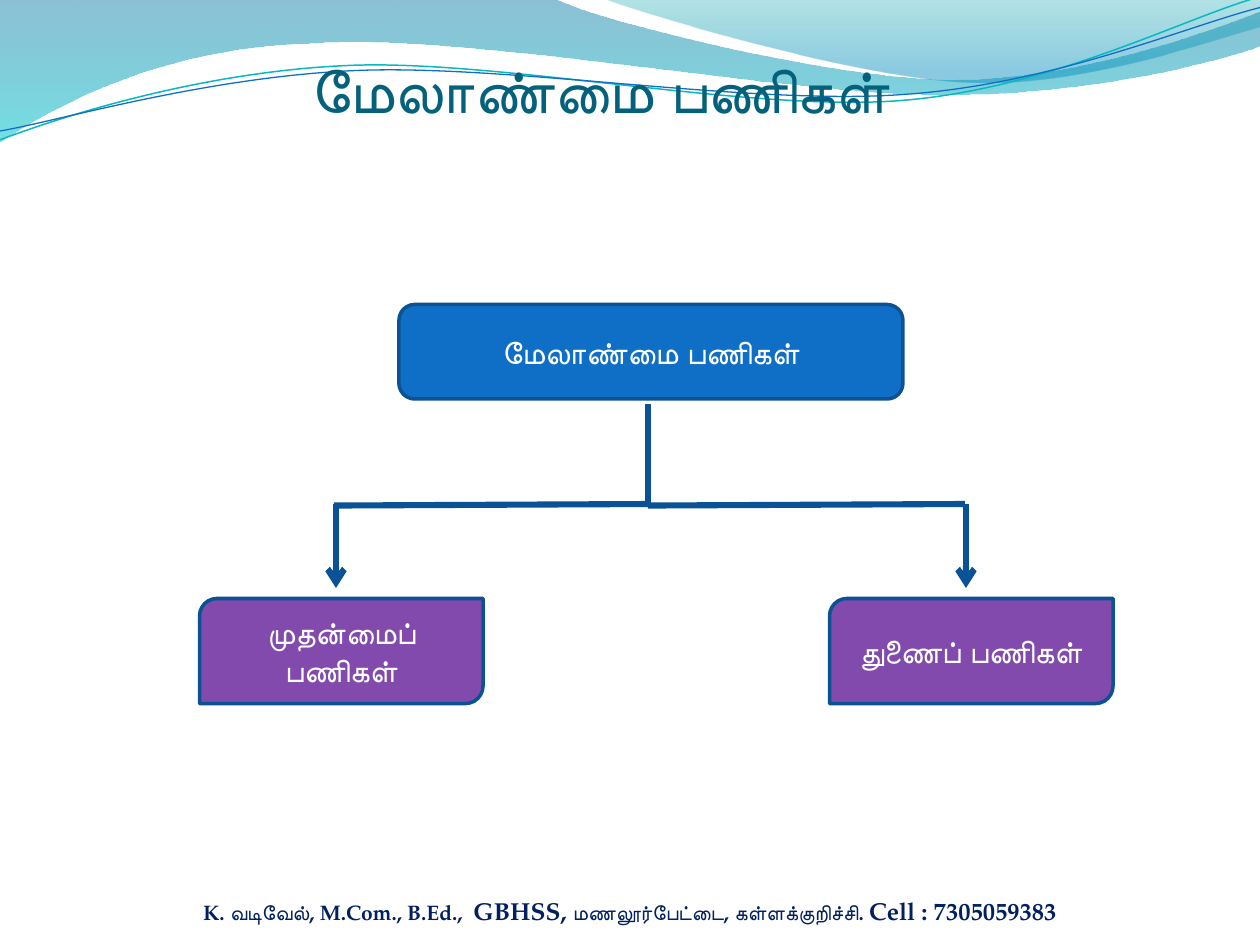
import pptx
import pptx.util
import pptx.dml.color
import pptx.enum.shapes
import pptx.enum.text
import pptx.oxml
import pptx.oxml.ns

SHAPE = pptx.enum.shapes.MSO_SHAPE
ANCHOR = pptx.enum.text.MSO_ANCHOR
AUTO_SIZE = pptx.enum.text.MSO_AUTO_SIZE
CENTER = pptx.enum.text.PP_ALIGN.CENTER
NAMESPACE = pptx.oxml.ns.nsdecls("a")
qn = pptx.oxml.ns.qn
rgb = pptx.dml.color.RGBColor.from_string
Pt = pptx.util.Pt

THEME = {
    "title": {"name": "Calibri", "size": Pt(35), "bold": True, "color": "04617B"},
    "box": {"name": "TeX Gyre Pagella", "size": Pt(18), "bold": True, "color": "FFFFFF"},
    "small": {"name": "TeX Gyre Pagella", "size": Pt(12), "bold": True, "color": "002060"},
    "large": {"name": "TeX Gyre Pagella", "size": Pt(14), "bold": True, "color": "002060"},
    "root": "0F6FC6", "child": "7030A0", "border": "0B5292", "connector": "095295",
}

presentation = pptx.Presentation()
presentation.slide_width = pptx.util.Inches(10)
presentation.slide_height = pptx.util.Inches(7.5)
slide = presentation.slides.add_slide(presentation.slide_layouts[5])
shapes = slide.shapes

# Grid of 120 columns by 90 rows
COLUMN = presentation.slide_width // 120
ROW = presentation.slide_height // 90


def write(shape, runs, anchor, auto_size=AUTO_SIZE.NONE):
    """Fill a shape with one centred paragraph of (text, style) runs."""
    frame = shape.text_frame
    frame.word_wrap, frame.auto_size, frame.vertical_anchor = True, auto_size, anchor
    paragraph = frame.paragraphs[0]
    paragraph.alignment = CENTER
    for text, style in runs:
        run = paragraph.add_run()
        run.text = text
        for attribute, value in THEME[style].items():
            if attribute == "color":
                run.font.color.rgb = rgb(value)
            else:
                setattr(run.font, attribute, value)
    return frame


def set_opacity(color_element, percent):
    color_element.append(
        pptx.oxml.parse_xml(f'<a:alpha {NAMESPACE} val="{percent * 1000}"/>'))


# Header waves in hundredths of an inch: two values make a line, six a Bezier curve
waves = [
    {"start": (0, 0), "stops": [(0, "0074A1", 45), (1, "00C6CF", 55)], "steps": [
        (440, -1), (476, 17, 664, 63, 758, 63), (853, 63, 958, 26, 1000, 9),
        (1001, 36), (983, 44, 870, 76, 746, 75), (622, 75, 382, 28, 257, 34),
        (129, 36, 46, 83, -1, 113)]},
    {"start": (479, -1), "stops": [(0, "00A1A9", 30), (0.8, "008BBF", 45)], "steps": [
        (509, 11, 682, 62, 769, 65), (856, 69, 961, 32, 1000, 21), (1000, 0)]},
    {"start": (0, 111), "line": ("0AB8BF", 0.85), "steps": [
        (48, 93, 158, 57, 277, 52), (395, 47, 593, 89, 713, 80), (833, 71, 938, 15, 998, -2)]},
    {"start": (0, 104), "line": ("0F6FC6", 0.75), "steps": [
        (47, 96, 164, 61, 283, 56), (403, 51, 597, 84, 717, 75), (836, 67, 941, 21, 1000, 6)]},
]
for wave in waves:
    builder = shapes.build_freeform(*wave["start"], scale=pptx.util.Inches(0.01))
    for step in wave["steps"]:
        builder.add_line_segments(list(zip(step[::2], step[1::2])), close=False)
    if "stops" in wave:
        builder.add_line_segments([], close=True)
    shape = builder.convert_to_shape()
    shape.shadow.inherit = False

    # Join each group of three points into one curve
    segments = iter(shape.element.spPr.findall(".//" + qn("a:lnTo")))
    for step in wave["steps"]:
        group = [next(segments) for index in range(len(step) // 2)]
        if len(group) == 3:
            curve = pptx.oxml.parse_xml(f"<a:cubicBezTo {NAMESPACE}/>")
            group[0].addprevious(curve)
            for segment in group:
                curve.append(segment[0])
                segment.getparent().remove(segment)

    if "stops" in wave:
        shape.line.fill.background()
        shape.fill.gradient()
        shape.fill.gradient_angle = 270
        for stop, (position, color, opacity) in zip(shape.fill.gradient_stops, wave["stops"]):
            stop.position = position
            stop.color.rgb = rgb(color)
        elements = shape.element.spPr.findall(".//" + qn("a:srgbClr"))
        for element, (position, color, opacity) in zip(elements, wave["stops"]):
            set_opacity(element, opacity)
    else:
        color, width = wave["line"]
        shape.fill.background()
        shape.line.color.rgb = rgb(color)
        shape.line.width = Pt(width)

# Title, brought in front of the waves
title = shapes.title
title.left, title.top, title.width, title.height = 4 * COLUMN, 3 * ROW, 108 * COLUMN, 9 * ROW
frame = write(title, [("மேலாண்மை பணிகள் ", "title")], ANCHOR.BOTTOM)
frame.margin_left = frame.margin_right = frame.margin_bottom = 0
title.element.getparent().append(title.element)

# Boxes: text, preset, column, row, columns wide, rows high, fill, opacity
boxes = [
    ("மேலாண்மை பணிகள்", SHAPE.ROUNDED_RECTANGLE, 38, 29, 48, 9, "root", 100),
    ("முதன்மைப் பணிகள்", SHAPE.ROUND_2_DIAG_RECTANGLE, 19, 57, 27, 10, "child", 87),
    ("துணைப் பணிகள்", SHAPE.ROUND_2_DIAG_RECTANGLE, 79, 57, 27, 10, "child", 87),
]
for text, preset, column, row, columns, rows, fill, opacity in boxes:
    shape = shapes.add_shape(preset, column * COLUMN, row * ROW, columns * COLUMN, rows * ROW)
    shape.shadow.inherit = False
    shape.fill.solid()
    shape.fill.fore_color.rgb = rgb(THEME[fill])
    if opacity < 100:
        set_opacity(shape.element.spPr.find(".//" + qn("a:srgbClr")), opacity)
    shape.line.color.rgb = rgb(THEME["border"])
    shape.line.width = Pt(2)
    write(shape, [(text, "box")], ANCHOR.MIDDLE)

# Branches: start column and row, end column and row, arrowhead
branches = [
    (61.75, 38.5, 61.75, 48, False),
    (31.8, 48.15, 62, 48, False),
    (32, 48, 32, 56, True),
    (92, 48, 92, 56, True),
    (61.7, 48.15, 91.9, 48, False),
]
for x1, y1, x2, y2, arrow in branches:
    connector = shapes.add_connector(
        pptx.enum.shapes.MSO_CONNECTOR.STRAIGHT,
        int(x1 * COLUMN), int(y1 * ROW), int(x2 * COLUMN), int(y2 * ROW))
    connector.line.color.rgb = rgb(THEME["connector"])
    connector.line.width = Pt(3.5)
    if arrow:
        connector.element.spPr.find(qn("a:ln")).append(
            pptx.oxml.parse_xml(f'<a:tailEnd {NAMESPACE} type="arrow"/>'))
    connector.element.spPr.append(pptx.oxml.parse_xml(f"<a:effectLst {NAMESPACE}/>"))

# Footer
footer = shapes.add_textbox(0, int(84.7 * ROW), presentation.slide_width, 4 * ROW)
write(footer, [
    ("K. வடிவேல், M.Com., B.Ed.,  ", "small"),
    ("GBHSS, ", "large"),
    ("மணலூர்பேட்டை, கள்ளக்குறிச்சி. ", "small"),
    ("Cell : 7305059383", "large"),
], ANCHOR.TOP, AUTO_SIZE.SHAPE_TO_FIT_TEXT)

presentation.save("out.pptx")
